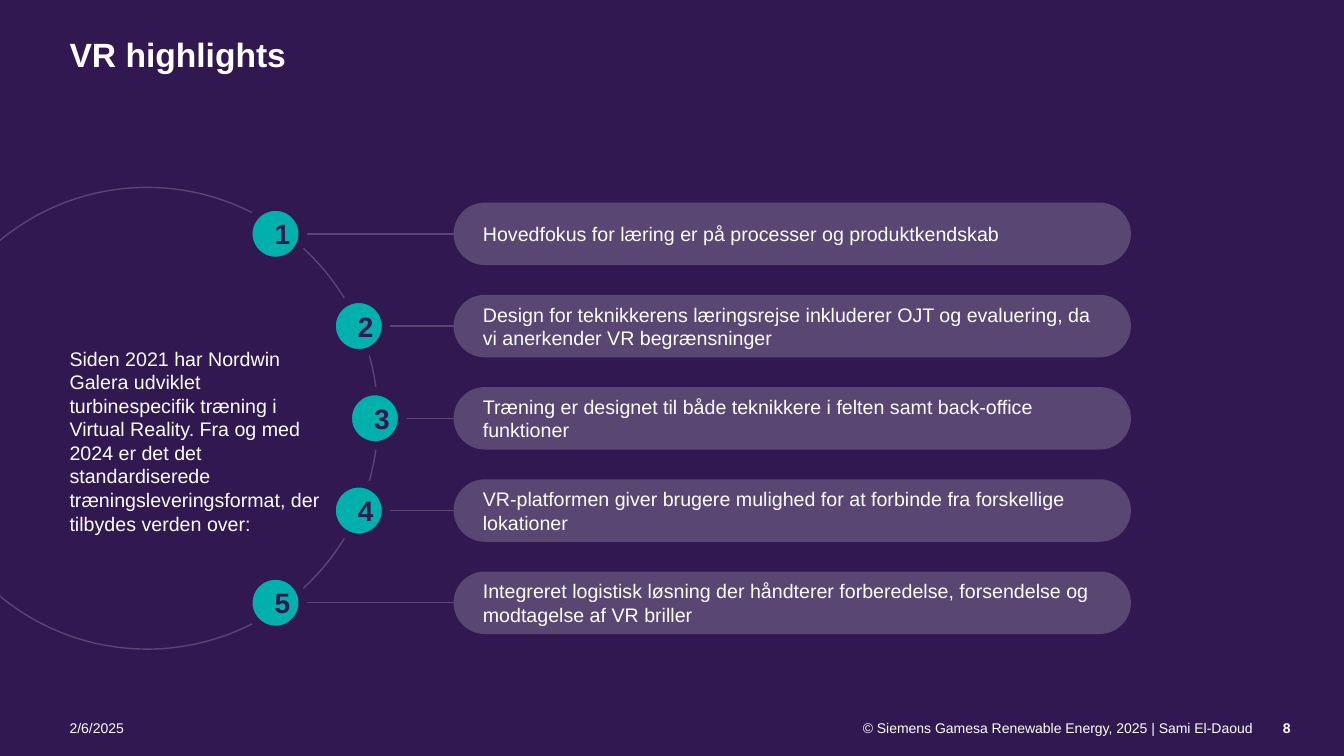
from lxml.etree import SubElement
from pptx import Presentation
from pptx.dml.color import RGBColor
from pptx.enum.shapes import MSO_CONNECTOR, MSO_SHAPE
from pptx.enum.text import MSO_ANCHOR as Anchor, PP_ALIGN as Align
from pptx.oxml.ns import qn
from pptx.util import Inches, Pt

WIDTH, HEIGHT = Inches(13.333), Inches(7.5)
PURPLE, MAUVE, TEAL, WHITE = "321850", "5A4673", "00B0AD", "FFFFFF"
MIDDLE_ROW, ROW_PITCH = 55.33, 12.2
PILL_LEFT, PILL_WIDTH, PILL_HEIGHT = 33.75, 50.4, 8.27
DISC_SIZE, RING_SIZE, RING_CENTER = 7.2, 61.07, 10.95
MARGIN, FOOTER_TOP, FOOTER_HEIGHT = 5.18, 95.2, 4.8
SHAPE_INSETS = (1.5, 2.13, 1.5, 2.13)

HIGHLIGHTS = [
    (20.5, "Hovedfokus for læring er på processer og produktkendskab"),
    (26.7, "Design for teknikkerens læringsrejse inkluderer OJT og evaluering, "
           "da vi anerkender VR begrænsninger"),
    (27.9, "Træning er designet til både teknikkere i felten samt back-office funktioner"),
    (26.7, "VR-platformen giver brugere mulighed for at forbinde fra forskellige lokationer"),
    (20.5, "Integreret logistisk løsning der håndterer forberedelse, forsendelse "
           "og modtagelse af VR briller"),
]
INTRODUCTION = ("Siden 2021 har Nordwin Galera udviklet turbinespecifik træning i Virtual "
                "Reality. Fra og med 2024 er det det standardiserede "
                "træningsleveringsformat, der tilbydes verden over:")


def across(share):
    """Turn a percentage of the slide width into a length."""
    return round(WIDTH * share / 100)


def down(share):
    """Turn a percentage of the slide height into a length."""
    return round(HEIGHT * share / 100)


def color(value):
    """Turn a hex string into a colour."""
    return RGBColor.from_string(value)


def write(shape, text, size, ink=WHITE, bold=False, align=Align.LEFT,
          anchor=Anchor.TOP, insets=(0, 0, 0, 0)):
    """Set the single paragraph of a shape, with insets as slide shares."""
    frame = shape.text_frame
    frame.word_wrap = True
    frame.vertical_anchor = anchor
    left, top, right, bottom = insets
    frame.margin_left, frame.margin_right = across(left), across(right)
    frame.margin_top, frame.margin_bottom = down(top), down(bottom)
    paragraph = frame.paragraphs[0]
    paragraph.text = text
    paragraph.alignment = align
    font = paragraph.font
    font.name, font.size, font.bold = "Arial", Pt(size), bold
    font.color.rgb = color(ink)
    return paragraph


def add_text(slide, box, text, size, **style):
    """Add a text box placed by slide shares."""
    left, top, width, height = box
    shape = slide.shapes.add_textbox(across(left), down(top), across(width), down(height))
    return write(shape, text, size, **style)


def add_circle(slide, center_x, center_y, size, line, weight, fill=None):
    """Add a circle around a centre, its size a share of the slide height."""
    diameter = down(size)
    shape = slide.shapes.add_shape(
        MSO_SHAPE.OVAL, across(center_x) - diameter // 2,
        down(center_y) - diameter // 2, diameter, diameter)
    shape.shadow.inherit = False
    if fill:
        shape.fill.solid()
        shape.fill.fore_color.rgb = color(fill)
    else:
        shape.fill.background()
    shape.line.color.rgb = color(line)
    shape.line.width = Pt(weight)
    return shape


def add_link(slide, start_x, end_x, center_y):
    """Add a thin horizontal line."""
    link = slide.shapes.add_connector(
        MSO_CONNECTOR.STRAIGHT, across(start_x), down(center_y),
        across(end_x), down(center_y))
    link.line.color.rgb = color(MAUVE)
    link.line.width = Pt(1)
    SubElement(link._element.spPr, qn("a:effectLst"))


def add_pill(slide, center_y, text):
    """Add a fully rounded bar holding one highlight."""
    pill = slide.shapes.add_shape(
        MSO_SHAPE.ROUNDED_RECTANGLE, across(PILL_LEFT), down(center_y - PILL_HEIGHT / 2),
        across(PILL_WIDTH), down(PILL_HEIGHT))
    pill.adjustments[0] = 0.5
    pill.shadow.inherit = False
    pill.fill.solid()
    pill.fill.fore_color.rgb = color(MAUVE)
    pill.line.fill.background()
    write(pill, text, 14, anchor=Anchor.MIDDLE, insets=SHAPE_INSETS)


def add_highlight(slide, number, disc_x, text):
    """Add one numbered row: link, pill and disc."""
    center_y = MIDDLE_ROW + (number - 3) * ROW_PITCH
    add_link(slide, disc_x, PILL_LEFT, center_y)
    add_pill(slide, center_y, text)
    disc = add_circle(slide, disc_x, center_y, DISC_SIZE, PURPLE, 6, TEAL)
    write(disc, str(number), 20, ink=PURPLE, bold=True, align=Align.CENTER,
          anchor=Anchor.MIDDLE, insets=SHAPE_INSETS)


def add_footer(slide):
    """Add the date, the copyright line and the slide number."""
    add_text(slide, (0, FOOTER_TOP, 13.88, FOOTER_HEIGHT), "2/6/2025", 10,
             insets=(MARGIN, 0, 0, 0))
    add_text(slide, (51.2, FOOTER_TOP, 48.8, FOOTER_HEIGHT),
             "© Siemens Gamesa Renewable Energy, 2025 | Sami El-Daoud", 10,
             align=Align.RIGHT, insets=(0, 0, 6.82, 0))
    add_text(slide, (93.2, FOOTER_TOP, 6.8, FOOTER_HEIGHT), "8", 10, bold=True,
             align=Align.RIGHT, insets=(0, 0, 3.98, 0))


def main():
    """Build and save the slide."""
    presentation = Presentation()
    presentation.slide_width, presentation.slide_height = WIDTH, HEIGHT
    slide = presentation.slides.add_slide(presentation.slide_layouts[6])
    slide.background.fill.solid()
    slide.background.fill.fore_color.rgb = color(PURPLE)

    title = add_text(slide, (0, 0, 79.2, 20.67), "VR highlights", 24, bold=True,
                     insets=(MARGIN, 5.47, 0, 0))
    title.line_spacing = 0.9
    add_circle(slide, RING_CENTER, MIDDLE_ROW, RING_SIZE, MAUVE, 1)
    for number, (disc_x, text) in enumerate(HIGHLIGHTS, start=1):
        add_highlight(slide, number, disc_x, text)
    add_text(slide, (MARGIN, 45.87, 18.82, 25.07), INTRODUCTION, 14)
    add_footer(slide)
    presentation.save("out.pptx")


if __name__ == "__main__":
    main()
